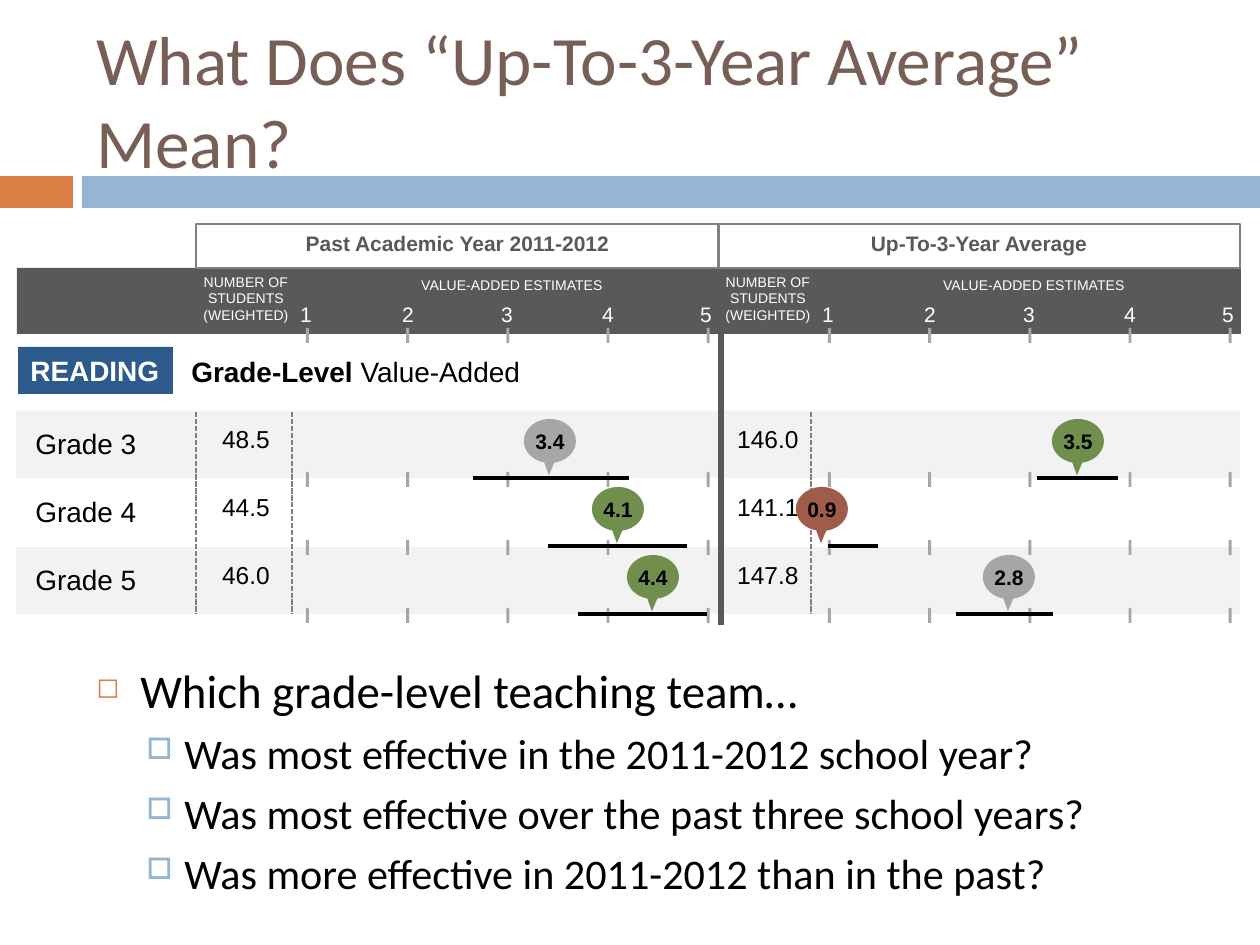
from lxml import etree
from pptx import Presentation
from pptx.dml.color import RGBColor
from pptx.enum.dml import MSO_LINE_DASH_STYLE as DASH
from pptx.enum.shapes import MSO_CONNECTOR, MSO_SHAPE as SHAPE
from pptx.enum.text import MSO_ANCHOR as ANCHOR, PP_ALIGN as ALIGN
from pptx.oxml.ns import qn
from pptx.util import Emu, Pt

PX_PER_INCH = 126
WHITE, BLACK, DARK, MID, BAND = "FFFFFF", "000000", "595959", "A6A6A6", "F2F2F2"
ORANGE, BLUE, NAVY, BROWN = "DD8047", "94B6D2", "2C5A8C", "775F55"
GREEN, RED, RULE = "708F4D", "9F5C49", "808080"

ROW_PITCH, ROW_H = 68, 67
TICK_X, TICK_STEP = 110, 100.2
NUMBER_CENTRES = (110, 212, 311, 412, 510)

GRADES = ("Grade 3", "Grade 4", "Grade 5")
# Per grade: students, estimate, colour, callout centre, interval start and end
PAST_YEAR = (
    ("48.5", "3.4", MID, 354, 277, 433),
    ("44.5", "4.1", GREEN, 422, 352, 491),
    ("46.0", "4.4", GREEN, 457, 382, 511),
)
THREE_YEAR = (
    ("146.0", "3.5", GREEN, 360, 319, 400),
    ("141.1", "0.9", RED, 104, 110, 160),
    ("147.8", "2.8", MID, 291, 238, 335),
)
QUESTIONS = (
    "Was most effective in the 2011-2012 school year?",
    "Was most effective over the past three school years?",
    "Was more effective in 2011-2012 than in the past?",
)


def px(n):
    return Emu(round(n * 914400 / PX_PER_INCH))


def rgb(value):
    return RGBColor.from_string(value)


def write(sp, *lines, size, color=BLACK, font="Arial", bold=False, align=ALIGN.LEFT,
          anchor=ANCHOR.TOP, wrap=False, insets=None):
    """Fill a shape with lines; a line is a string or a list of (text, bold) runs."""
    tf = sp.text_frame
    tf.word_wrap, tf.vertical_anchor = wrap, anchor
    if insets:
        (tf.margin_left, tf.margin_top,
         tf.margin_right, tf.margin_bottom) = [px(n) for n in insets]
    for i, line in enumerate(lines):
        p = tf.paragraphs[0] if i == 0 else tf.add_paragraph()
        p.alignment = align
        for text, heavy in [(line, bold)] if isinstance(line, str) else line:
            r = p.add_run()
            r.text = text
            r.font.name, r.font.size, r.font.bold = font, Pt(size), heavy
            r.font.color.rgb = rgb(color)
    return tf


def label(s, x, y, w, h, *lines, **fmt):
    return write(s.shapes.add_textbox(px(x), px(y), px(w), px(h)), *lines, **fmt)


def centred(s, centre, y, w, h, *lines, **fmt):
    return label(s, centre - w / 2, y, w, h, *lines, align=ALIGN.CENTER, **fmt)


def box(s, x, y, w, h, fill=None, line=None, kind=SHAPE.RECTANGLE):
    sp = s.shapes.add_shape(kind, px(x), px(y), px(w), px(h))
    sp.shadow.inherit = False
    if fill:
        sp.fill.solid()
        sp.fill.fore_color.rgb = rgb(fill)
    else:
        sp.fill.background()
    if line:
        sp.line.color.rgb, sp.line.width = rgb(line), Pt(1)
    else:
        sp.line.fill.background()
    return sp


def rule(s, x1, y1, x2, y2, color, width, dash=None):
    c = s.shapes.add_connector(MSO_CONNECTOR.STRAIGHT, px(x1), px(y1), px(x2), px(y2))
    c.line.color.rgb, c.line.width = rgb(color), Pt(width)
    if dash:
        c.line.dash_style = dash
    etree.SubElement(c._element.spPr, qn("a:effectLst"))


def bullet(p, char, color, percent, margin, hang):
    pPr = p._p.get_or_add_pPr()
    pPr.set("marL", str(px(margin)))
    pPr.set("indent", str(-px(hang)))
    clr = etree.SubElement(pPr, qn("a:buClr"))
    etree.SubElement(clr, qn("a:srgbClr"), val=color)
    etree.SubElement(pPr, qn("a:buSzPct"), val=str(percent * 1000))
    etree.SubElement(pPr, qn("a:buChar"), char=char)


def ticks(s, x, y):
    for i in range(5):
        box(s, x + TICK_X + i * TICK_STEP, y, 3, 15, MID)


def title_region(s, x, y, w, h):
    box(s, 0, 176, 73, 32, ORANGE)
    box(s, 82, 176, 1178, 32, BLUE)
    label(s, x, y, w, h, "What Does “Up-To-3-Year Average” Mean?", size=39.6,
          color=BROWN, font="Calibri", anchor=ANCHOR.MIDDLE, wrap=True)


def row_region(s, x, y, w):
    """Header bar, subject heading and grade bands."""
    box(s, x + 1, y, w, 66, DARK)
    write(box(s, x + 2, y + 79, 155, 47, NAVY), "READING", size=16, color=WHITE, bold=True)
    label(s, x + 163, y + 80, 358, 47, [("Grade-Level", True), (" Value-Added", False)],
          size=16)
    for i, grade in enumerate(GRADES):
        top = y + 143 + i * ROW_PITCH
        if i % 2 == 0:
            box(s, x, top, w, ROW_H, BAND)
        label(s, x + 7, top + 9, 127, 47, grade, size=16)


def panel(s, x, y, w, heading, rows, dashed):
    """One period: heading, scale and a callout with its interval for each grade."""
    write(box(s, x, y, w, 44, line=RULE), heading, size=12, color=DARK, bold=True,
          align=ALIGN.CENTER, wrap=True, insets=(13, 6, 13, 13))
    centred(s, x + 50, y + 43, 111, 63, "NUMBER OF", "STUDENTS", "(WEIGHTED)",
            size=8, color=WHITE)
    centred(s, x + 316, y + 46, 210, 30, "VALUE-ADDED ESTIMATES", size=8, color=WHITE)
    for n, centre in enumerate(NUMBER_CENTRES, 1):
        centred(s, x + centre, y + 71, 37, 38, str(n), size=12, color=WHITE)
    ticks(s, x, y + 104)

    first = y + 187
    for offset in dashed:
        rule(s, x + offset, first + 1, x + offset, first + 203, RULE, 1, DASH.SQUARE_DOT)
    for i, (students, value, color, centre, start, end) in enumerate(rows):
        top = first + i * ROW_PITCH
        ticks(s, x, top + 61)
        centred(s, x + 50, top + 7, 87, 43, students, size=14)
        rule(s, x + start, top + ROW_H, x + end, top + ROW_H, BLACK, 2.5)
        sp = box(s, x + centre - 26, top + 8, 52, 44, color, kind=SHAPE.OVAL_CALLOUT)
        sp.adjustments[0], sp.adjustments[1] = -0.02, 0.78
        write(sp, value, size=12, bold=True, align=ALIGN.CENTER, anchor=ANCHOR.MIDDLE,
              wrap=True, insets=(0, 0, 0, 0))


def question_region(s, x, y, w, h):
    tf = label(s, x, y, w, h, "Which grade-level teaching team…", *QUESTIONS,
               size=24.1, font="Calibri", wrap=True)
    lead, *rest = tf.paragraphs
    bullet(lead, "◻", ORANGE, 60, 44, 44)
    lead.runs[0].font.size = Pt(26.8)
    for p in rest:
        p.level = 1
        bullet(p, "□", BLUE, 70, 88, 38)
        p.space_before = Pt(5.5)


def main():
    prs = Presentation()
    prs.slide_width, prs.slide_height = px(1260), px(945)
    s = prs.slides.add_slide(prs.slide_layouts[6])
    title_region(s, 84, 31, 1124, 136)
    row_region(s, 16, 268, 1224)
    box(s, 718, 333, 6, 292, DARK)
    panel(s, 196, 224, 523, "Past Academic Year 2011-2012", PAST_YEAR, (0, 96))
    panel(s, 718, 224, 522, "Up-To-3-Year Average", THREE_YEAR, (93,))
    question_region(s, 84, 655, 1124, 218)
    prs.save("out.pptx")


if __name__ == "__main__":
    main()
